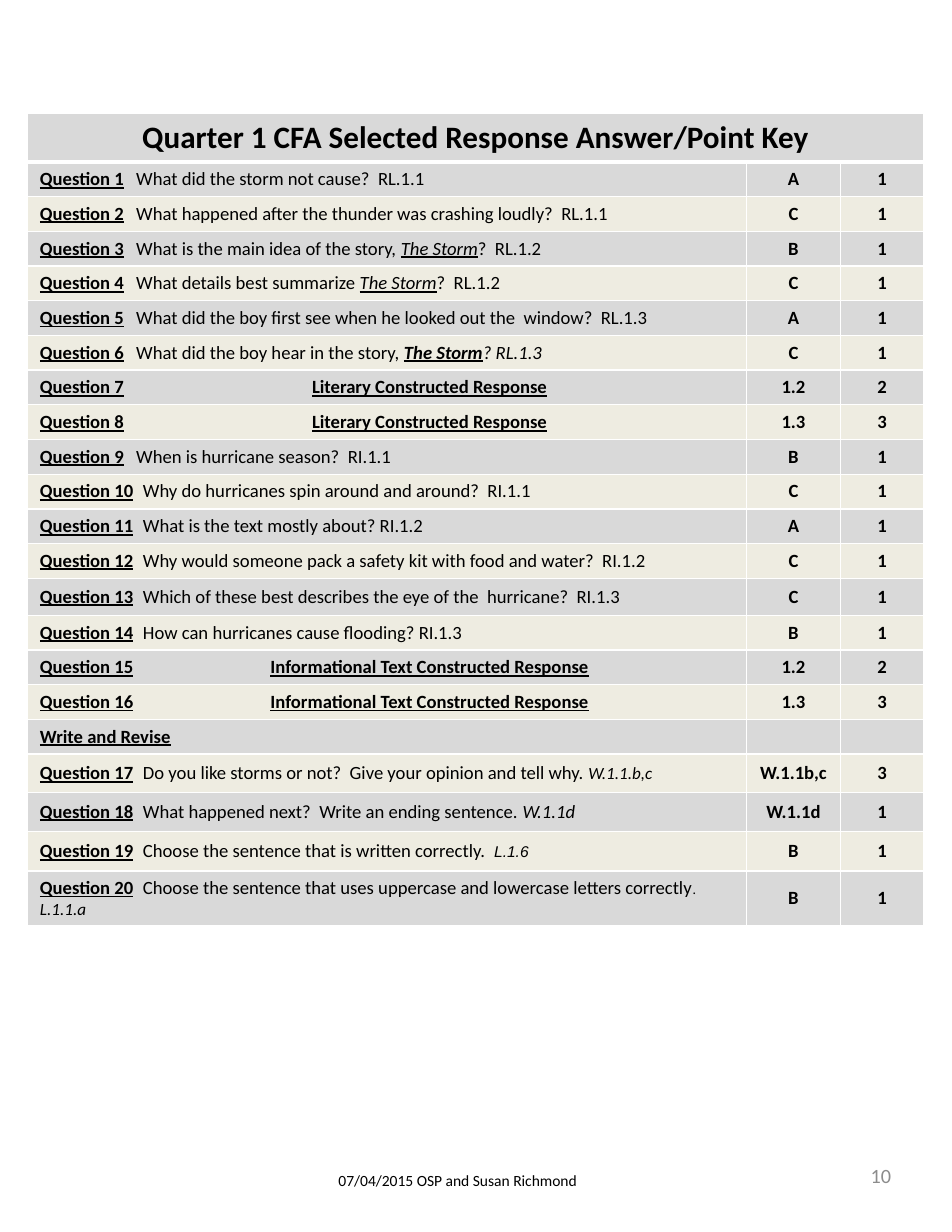
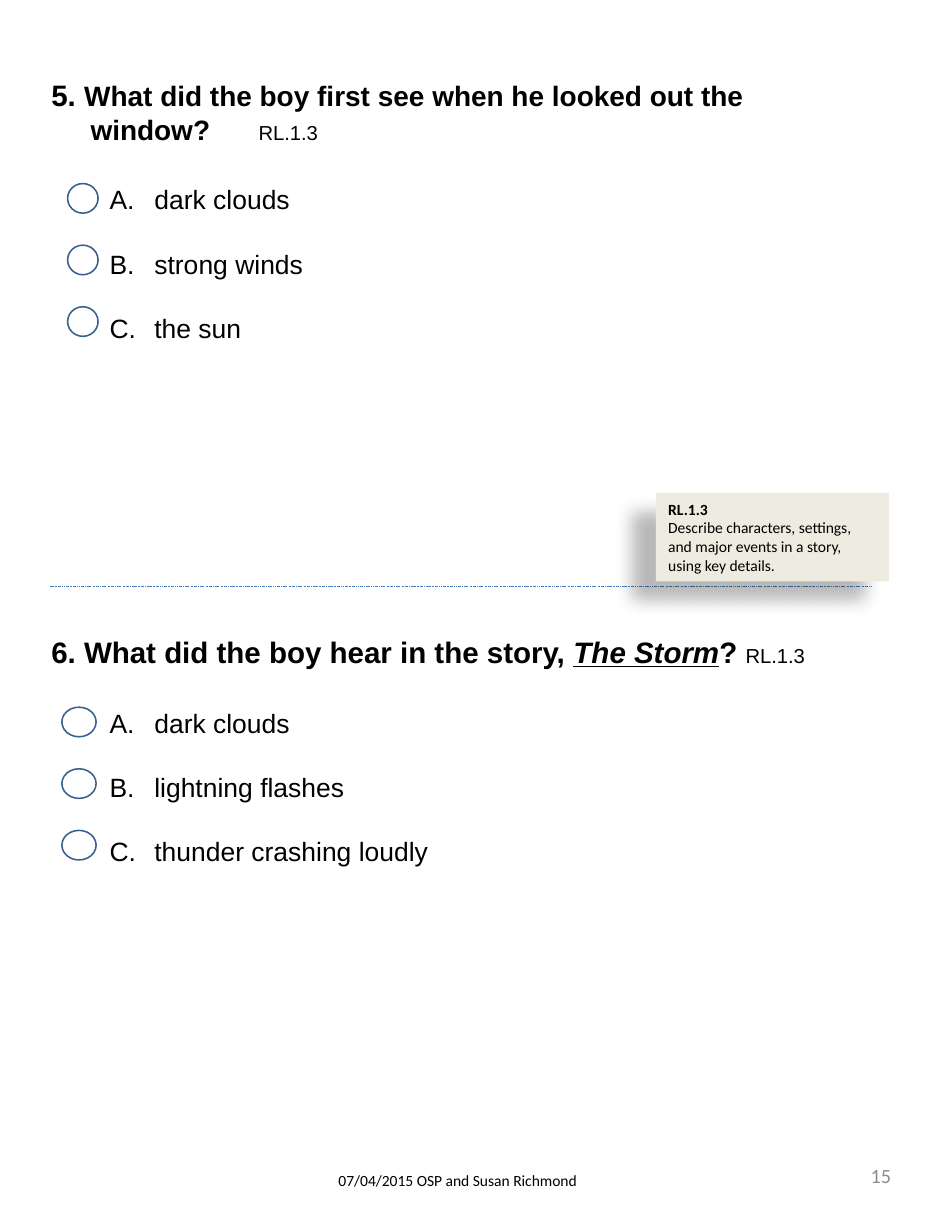
from lxml.etree import SubElement
from pptx import Presentation
from pptx.dml.color import RGBColor
from pptx.enum.dml import MSO_LINE
from pptx.enum.shapes import MSO_CONNECTOR, MSO_SHAPE
from pptx.enum.text import MSO_ANCHOR as Anchor, PP_ALIGN as Align
from pptx.oxml.ns import qn
from pptx.util import Inches, Pt

# Shared look
BLACK = RGBColor(0x00, 0x00, 0x00)
WHITE = RGBColor(0xFF, 0xFF, 0xFF)
GRAY = RGBColor(0xD9, 0xD9, 0xD9)
CREAM = RGBColor(0xEE, 0xEC, 0xE1)
PAGE_GRAY = RGBColor(0x8C, 0x8C, 0x8C)
BUBBLE_BLUE = RGBColor(0x3A, 0x5F, 0x8C)
CUT_BLUE = RGBColor(0x4B, 0x7E, 0xBC)
BODY, TEST = "Calibri", "Arial"
WIDTH, HEIGHT = Inches(8.5), Inches(11)
FOOTER = "07/04/2015 OSP and Susan Richmond"
INSETS = (0.11, 0.06)

# Run formats
LABEL = dict(bold=True, underline=True)
TITLE = dict(italic=True, underline=True)
ITALIC = dict(italic=True)
STORM = ("The Storm", TITLE)

# Answer key: label, question runs, answer, points
LITERARY = [("Literary Constructed Response", LABEL)]
INFORMATIONAL = [("Informational Text Constructed Response", LABEL)]
ANSWER_KEY = [
    ("Question 1", ["What did the storm not cause?  RL.1.1"], "A", "1"),
    ("Question 2", ["What happened after the thunder was crashing loudly?  RL.1.1"], "C", "1"),
    ("Question 3", ["What is the main idea of the story, ", STORM, "?  RL.1.2"], "B", "1"),
    ("Question 4", ["What details best summarize ", STORM, "?  RL.1.2"], "C", "1"),
    ("Question 5", ["What did the boy first see when he looked out the  window?  RL.1.3"], "A", "1"),
    ("Question 6", ["What did the boy hear in the story, ", ("The Storm", {**TITLE, "bold": True}),
                    ("? RL.1.3", ITALIC)], "C", "1"),
    ("Question 7", LITERARY, "1.2", "2"),
    ("Question 8", LITERARY, "1.3", "3"),
    ("Question 9", ["When is hurricane season?  RI.1.1"], "B", "1"),
    ("Question 10", ["Why do hurricanes spin around and around?  RI.1.1"], "C", "1"),
    ("Question 11", ["What is the text mostly about? RI.1.2"], "A", "1"),
    ("Question 12", ["Why would someone pack a safety kit with food and water?  RI.1.2"], "C", "1"),
    ("Question 13", ["Which of these best describes the eye of the  hurricane?  RI.1.3"], "C", "1"),
    ("Question 14", ["How can hurricanes cause flooding? RI.1.3"], "B", "1"),
    ("Question 15", INFORMATIONAL, "1.2", "2"),
    ("Question 16", INFORMATIONAL, "1.3", "3"),
    ("Write and Revise", [], "", ""),
    ("Question 17", ["Do you like storms or not?  Give your opinion and tell why. ",
                     ("W.1.1.b,c", dict(size=11, italic=True))], "W.1.1b,c", "3"),
    ("Question 18", ["What happened next?  Write an ending sentence. ", ("W.1.1d", ITALIC)], "W.1.1d", "1"),
    ("Question 19", ["Choose the sentence that is written correctly.  ",
                     ("L.1.6", dict(size=10, font=TEST, italic=True))], "B", "1"),
    ("Question 20", ["Choose the sentence that uses uppercase and lowercase letters correctly",
                     (". ", dict(size=9, italic=True)), ("L.1.1.a", dict(size=11, italic=True))], "B", "1"),
]
KEY_COLUMNS = [75.5, 9.9, 8.7]
KEY_ROWS = [3.9] + [2.82] * 12 + [3] + [2.82] * 4 + [3.1, 3.2, 3.2, 4.2]


def across(share):
    """Percent of the slide width."""
    return round(WIDTH * share / 100)


def down(share):
    """Percent of the slide height."""
    return round(HEIGHT * share / 100)


def place(x, y, w, h):
    return across(x), down(y), across(w), down(h)


def write(paragraph, *runs, align=Align.LEFT, size=12, font=BODY, color=BLACK,
          bold=False, italic=False, underline=False):
    """Fill a paragraph with strings or (string, format changes) pairs."""
    paragraph.alignment = align
    shared = dict(size=size, font=font, color=color, bold=bold, italic=italic, underline=underline)
    for piece in runs:
        text, changes = (piece, {}) if isinstance(piece, str) else piece
        look = {**shared, **changes}
        if text == "\n":
            paragraph.add_line_break()
            continue
        run = paragraph.add_run()
        run.text = text
        run.font.size, run.font.name = Pt(look["size"]), look["font"]
        run.font.color.rgb = look["color"]
        run.font.bold, run.font.italic = look["bold"], look["italic"]
        run.font.underline = look["underline"]


def indent(paragraph, left):
    """Hang the first line 0.4 inch or less before the left margin."""
    properties = paragraph._p.get_or_add_pPr()
    properties.set("marL", str(Inches(left)))
    properties.set("indent", str(-Inches(min(left, 0.4))))
    return properties


def tab_stop(paragraph, position, kind="l"):
    stops = SubElement(paragraph._p.get_or_add_pPr(), qn("a:tabLst"))
    SubElement(stops, qn("a:tab"), pos=str(Inches(position)), algn=kind)


def set_frame(frame, insets=INSETS, anchor=Anchor.TOP):
    frame.word_wrap = True
    frame.margin_left = frame.margin_right = Inches(insets[0])
    frame.margin_top = frame.margin_bottom = Inches(insets[1])
    frame.vertical_anchor = anchor
    return frame.paragraphs[0]


def add_text_box(slide, box, **frame_format):
    frame = slide.shapes.add_textbox(*place(*box)).text_frame
    return frame, set_frame(frame, **frame_format)


def add_page(deck, number):
    """Blank page with the shared footer and page number."""
    slide = deck.slides.add_slide(deck.slide_layouts[6])
    _, credit = add_text_box(slide, (34.4, 94.6, 31.6, 5.4), insets=(0.1, 0.05))
    write(credit, FOOTER, size=10)
    _, page = add_text_box(slide, (71.6, 92.7, 23.3, 5.4), anchor=Anchor.MIDDLE)
    write(page, number, align=Align.RIGHT, size=13, color=PAGE_GRAY)
    return slide


def style_cell(cell, fill, bottom=1):
    """White rules, solid fill and shared margins; returns the first paragraph."""
    properties = cell._tc.get_or_add_tcPr()
    for side, points in (("L", 1), ("R", 1), ("T", 1), ("B", bottom)):
        rule = SubElement(properties, qn(f"a:ln{side}"), w=str(Pt(points)))
        SubElement(SubElement(rule, qn("a:solidFill")), qn("a:srgbClr"), val=str(WHITE))
    cell.fill.solid()
    cell.fill.fore_color.rgb = fill
    cell.margin_left = cell.margin_right = Inches(0.11)
    cell.margin_top = cell.margin_bottom = Inches(0.05)
    cell.vertical_anchor = Anchor.MIDDLE
    return cell.text_frame.paragraphs[0]


def write_question(paragraph, label, question):
    write(paragraph, (label, LABEL))
    if not question:
        return
    write(paragraph, "\t", *question)
    if question in (LITERARY, INFORMATIONAL):
        tab_stop(paragraph, 3.48, "ctr")
    else:
        tab_stop(paragraph, 0.86 if len(label) == len("Question 1") else 0.92)


def add_answer_key(slide):
    box = place(2.9, 9.2, sum(KEY_COLUMNS), sum(KEY_ROWS))
    table = slide.shapes.add_table(len(KEY_ROWS), len(KEY_COLUMNS), *box).table
    table.horz_banding = False
    for column, share in zip(table.columns, KEY_COLUMNS):
        column.width = across(share)
    for row, share in zip(table.rows, KEY_ROWS):
        row.height = down(share)

    # Heading across all columns
    headings = [style_cell(cell, GRAY, bottom=3) for cell in table.rows[0].cells]
    table.cell(0, 0).merge(table.cell(0, 2))
    write(headings[0], "Quarter 1 CFA Selected Response Answer/Point Key",
          align=Align.CENTER, size=20, bold=True)

    # One row per question
    for index, (label, question, *results) in enumerate(ANSWER_KEY):
        fill = CREAM if index % 2 else GRAY
        cells = [style_cell(cell, fill) for cell in table.rows[index + 1].cells]
        write_question(cells[0], label, question)
        for paragraph, result in zip(cells[1:], results):
            if result:
                write(paragraph, result, align=Align.CENTER, bold=True)
            else:
                SubElement(paragraph._p, qn("a:endParaRPr"), sz="1200")


def add_question(slide, box, question, choices, hang=0, tab=None):
    frame, heading = add_text_box(slide, box)
    write(heading, *question, size=19, font=TEST, bold=True)
    if hang:
        indent(heading, hang)
    if tab:
        tab_stop(heading, tab)
    for index, choice in enumerate(choices):
        paragraph = frame.add_paragraph()
        write(paragraph, choice, size=17, font=TEST)
        paragraph.space_before = Pt(21 if index else 24)
        SubElement(indent(paragraph, 0.92), qn("a:buFont"), typeface=TEST)
        SubElement(paragraph._p.pPr, qn("a:buAutoNum"), type="alphaUcPeriod")


def add_bubbles(slide, left, top, width, count=3, step=5):
    for index in range(count):
        bubble = slide.shapes.add_shape(MSO_SHAPE.OVAL, *place(left, top + index * step, width, 2.4))
        bubble.shadow.inherit = False
        bubble.fill.solid()
        bubble.fill.fore_color.rgb = WHITE
        bubble.line.color.rgb = BUBBLE_BLUE
        bubble.line.width = Pt(1)


def add_cut_line(slide, left, right, height):
    cut = slide.shapes.add_connector(MSO_CONNECTOR.STRAIGHT, across(left), down(height),
                                     across(right), down(height))
    cut.line.color.rgb = CUT_BLUE
    cut.line.width = Pt(0.25)
    cut.line.dash_style = MSO_LINE.DASH_DOT_DOT
    SubElement(cut._element.spPr, qn("a:effectLst"))


def add_standard(slide, box, code, description):
    """Cream note with a soft shadow to the lower left."""
    note = slide.shapes.add_shape(MSO_SHAPE.RECTANGLE, *place(*box))
    note.fill.solid()
    note.fill.fore_color.rgb = CREAM
    note.line.fill.background()
    note.shadow.inherit = False
    effects = note._element.spPr.find(qn("a:effectLst"))
    shadow = SubElement(effects, qn("a:outerShdw"), blurRad=str(Pt(11.8)), dist=str(Pt(19.7)),
                        dir=str(141 * 60000), algn="ctr", rotWithShape="0")
    tint = SubElement(shadow, qn("a:srgbClr"), val=str(BLACK))
    SubElement(tint, qn("a:alpha"), val="28000")
    write(set_frame(note.text_frame), (code, dict(bold=True)), "\n", description, size=10)


def main():
    deck = Presentation()
    deck.slide_width, deck.slide_height = WIDTH, HEIGHT

    # Answer key
    add_answer_key(add_page(deck, "10"))

    # Questions 5 and 6
    slide = add_page(deck, "15")
    standard = ("RL.1.3", dict(size=13, bold=False))
    add_cut_line(slide, 5.3, 91.6, 47.6)
    add_question(slide, (4.1, 50.9, 85.9, 22.5),
                 ["6. What did the boy hear in the story, ", STORM, "? ", standard],
                 ["dark clouds", "lightning flashes", "thunder crashing loudly"])
    add_bubbles(slide, 6.5, 57.4, 3.6)
    add_question(slide, (4.1, 5.7, 84.7, 22.7),
                 ["5. ", ("What did the boy first see when he looked out the window?\t", dict(size=18)),
                  standard],
                 ["dark clouds", "strong winds", "the sun"], hang=0.35, tab=1.5)
    add_bubbles(slide, 7.1, 14.9, 3.2)
    add_standard(slide, (68.9, 40, 24.5, 7.2), "RL.1.3",
                 "Describe characters, settings, and major events in a story, using key details.")

    deck.save("out.pptx")


if __name__ == "__main__":
    main()
